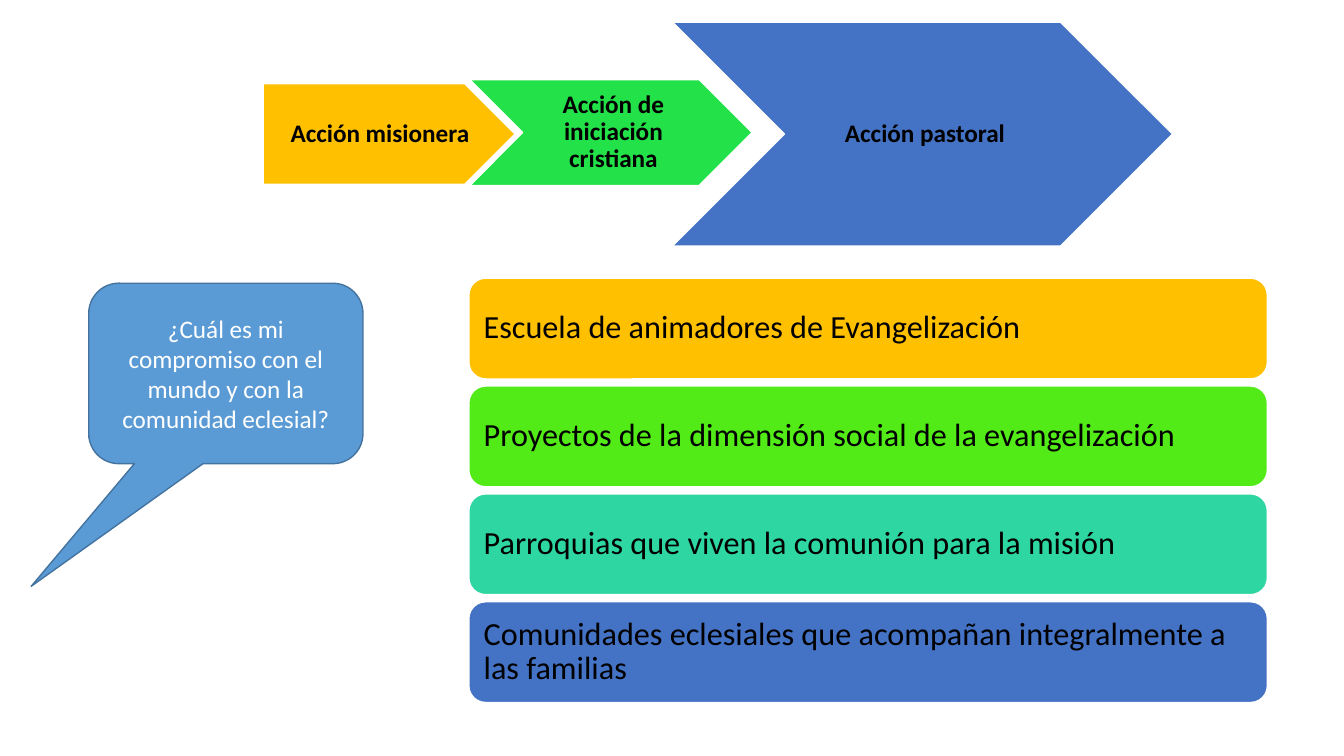
from dataclasses import dataclass

from pptx import Presentation
from pptx.dml.color import RGBColor
from pptx.enum import shapes, text
from pptx.util import Inches, Pt


@dataclass(frozen=True)
class Theme:
    font: str = "Calibri"
    body_size: float = 18
    bar_size: float = 23
    black: str = "000000"
    white: str = "FFFFFF"
    amber: str = "FFC000"
    green: str = "23E148"
    lime: str = "53EB17"
    teal: str = "2ED7A1"
    blue: str = "4472C4"
    sky: str = "5B9BD5"
    sky_edge: str = "43739E"


THEME = Theme()
SHAPE = shapes.MSO_SHAPE
CENTER, LEFT = text.PP_ALIGN.CENTER, text.PP_ALIGN.LEFT

# Stages: preset, box (left, top, width, height), fill, left inset, wording
STAGES = [
    (SHAPE.PENTAGON, (2.61, 0.83, 2.5, 1), THEME.amber, 0.1, "Acción misionera"),
    (SHAPE.CHEVRON, (4.66, 0.79, 2.8, 1.05), THEME.green, 0.08,
     "Acción de iniciación cristiana"),
    (SHAPE.CHEVRON, (6.67, 0.22, 4.96, 2.22), THEME.blue, 0.08, "Acción pastoral"),
]

BARS = [
    (THEME.amber, "Escuela de animadores de Evangelización"),
    (THEME.lime, "Proyectos de la dimensión social de la evangelización"),
    (THEME.teal, "Parroquias que viven la comunión para la misión"),
    (THEME.blue, "Comunidades eclesiales que acompañan integralmente a las familias"),
]
BAR_LEFT, BAR_TOP, BAR_WIDTH, BAR_HEIGHT, BAR_STEP = 4.65, 2.76, 7.92, 1, 1.07


def add_block(slide, preset, box, fill, edge):
    shape = slide.shapes.add_shape(preset, *(Inches(value) for value in box))
    shape.shadow.inherit = False
    shape.fill.solid()
    shape.fill.fore_color.rgb = RGBColor.from_string(fill)
    shape.line.color.rgb = RGBColor.from_string(edge)
    shape.line.width = Pt(1)
    return shape


def write(shape, wording, size, color, align, insets, bold=False, spacing=0.9):
    frame = shape.text_frame
    frame.text = wording
    frame.word_wrap = True
    frame.vertical_anchor = text.MSO_ANCHOR.MIDDLE
    (frame.margin_left, frame.margin_top,
     frame.margin_right, frame.margin_bottom) = (Inches(inset) for inset in insets)
    paragraph = frame.paragraphs[0]
    paragraph.alignment = align
    paragraph.line_spacing = spacing
    font = paragraph.runs[0].font
    font.name, font.size, font.bold = THEME.font, Pt(size), bold
    font.color.rgb = RGBColor.from_string(color)


def add_stage(slide, preset, box, fill, left_inset, wording):
    shape = add_block(slide, preset, box, fill, THEME.white)
    write(shape, wording, THEME.body_size, THEME.black, CENTER,
          (left_inset, 0.05, 0.03, 0.05), bold=True)


def add_bar(slide, index, fill, wording):
    box = (BAR_LEFT, BAR_TOP + index * BAR_STEP, BAR_WIDTH, BAR_HEIGHT)
    shape = add_block(slide, SHAPE.ROUNDED_RECTANGLE, box, fill, THEME.white)
    write(shape, wording, THEME.bar_size, THEME.black, LEFT, (0.1, 0.1, 0.1, 0.1))


def add_question(slide, box, pointer, wording):
    shape = add_block(slide, SHAPE.ROUNDED_RECTANGULAR_CALLOUT, box,
                      THEME.sky, THEME.sky_edge)
    shape.adjustments[0], shape.adjustments[1] = pointer
    write(shape, wording, THEME.body_size, THEME.white, CENTER,
          (0.1, 0.05, 0.1, 0.05), spacing=1.0)


def main():
    presentation = Presentation()
    presentation.slide_width = Inches(13.33)
    presentation.slide_height = Inches(7.5)
    slide = presentation.slides.add_slide(presentation.slide_layouts[6])

    # Sequence of stages across the top
    for stage in STAGES:
        add_stage(slide, *stage)

    # Stacked commitments
    for index, (fill, wording) in enumerate(BARS):
        add_bar(slide, index, fill, wording)

    # Question in the speech bubble
    add_question(slide, (0.88, 2.81, 2.72, 1.79), (-0.71, 1.18),
                 "¿Cuál es mi compromiso con el mundo y con la comunidad eclesial?")

    presentation.save("out.pptx")


if __name__ == "__main__":
    main()
